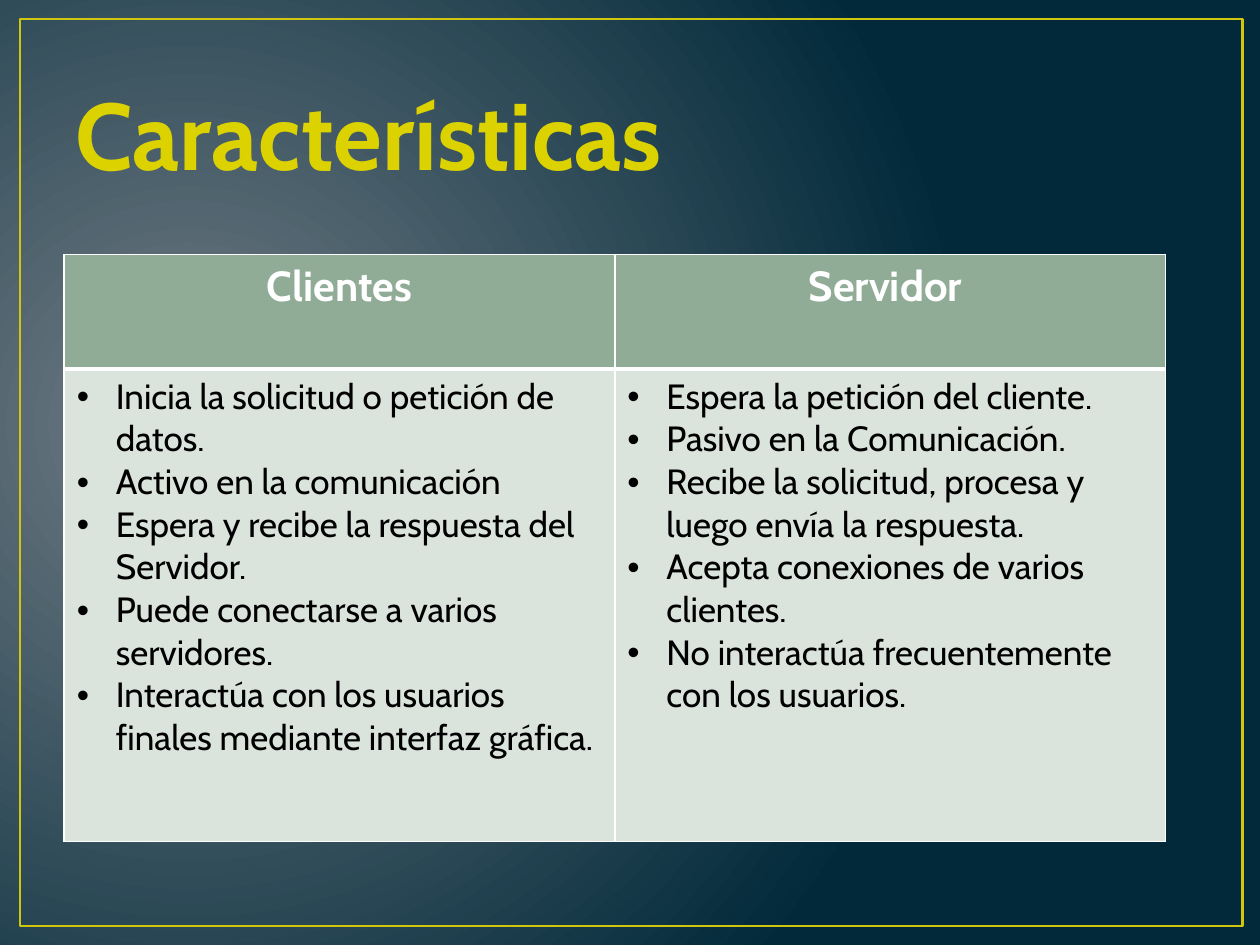
import pptx
import pptx.util
import pptx.dml.color
import pptx.enum.shapes
import pptx.enum.text
import pptx.oxml
import pptx.oxml.ns
from dataclasses import dataclass

TITLE = "Características"
COLUMNS = {
    "Clientes": [
        "Inicia la solicitud o petición de datos.",
        "Activo en la comunicación",
        "Espera y recibe la respuesta del Servidor.",
        "Puede conectarse a varios servidores.",
        "Interactúa con los usuarios finales mediante interfaz gráfica.",
    ],
    "Servidor ": [
        "Espera la petición del cliente.",
        "Pasivo en la Comunicación.",
        "Recibe la solicitud, procesa y luego envía la respuesta.",
        "Acepta conexiones de varios clientes.",
        "No interactúa frecuentemente con los usuarios.",
    ],
}


@dataclass
class Theme:
    font: str = "Cabin"
    glow: str = "717C84"
    night: str = "01293A"
    frame: str = "CFC60D"
    title: str = "DCD200"
    head: str = "90AC97"
    body: str = "DBE3DD"
    white: str = "FFFFFF"
    black: str = "000000"
    title_size: int = 54
    head_size: int = 24
    body_size: int = 20


T = Theme()
W, H = 10, 7.5
ROWS = [0.91, 3.75]
TABLE = (0.51, 2.02, 8.74, sum(ROWS))
INDENT = 0.31
ALIGN = pptx.enum.text.PP_ALIGN
Inches = pptx.util.Inches
NS = pptx.oxml.ns.nsdecls("a")


def rgb(value):
    return pptx.dml.color.RGBColor.from_string(value)


def box(at):
    return [Inches(v) for v in at]


def write(tf, lines, size, color, bold=False, align=ALIGN.LEFT, bullet=False):
    tf.word_wrap = True
    for i, text in enumerate(lines):
        p = tf.add_paragraph() if i else tf.paragraphs[0]
        p.alignment = align
        r = p.add_run()
        r.text = text
        r.font.name = T.font
        r.font.size = pptx.util.Pt(size)
        r.font.bold = bold
        r.font.color.rgb = rgb(color)
        if bullet:
            pr = p._p.get_or_add_pPr()
            pr.set("marL", str(Inches(INDENT)))
            pr.set("indent", str(-Inches(INDENT)))
            pr.append(pptx.oxml.parse_xml(f'<a:buFont {NS} typeface="Arial"/>'))
            pr.append(pptx.oxml.parse_xml(f'<a:buChar {NS} char="•"/>'))


def paint_background(s):
    s.background.fill.gradient()
    grad = next(s.element.iter(pptx.oxml.ns.qn("a:gradFill")))
    stops = "".join(
        f'<a:gs pos="{pos}"><a:srgbClr val="{color}"/></a:gs>'
        for pos, color in ((0, T.glow), (100000, T.night))
    )
    grad.getparent().replace(grad, pptx.oxml.parse_xml(
        f'<a:gradFill {NS} rotWithShape="1"><a:gsLst>{stops}</a:gsLst>'
        '<a:path path="circle"><a:fillToRect l="15000" t="50000" r="85000" b="60000"/>'
        '</a:path></a:gradFill>'))


def style_cell(cell, fill, **widths):
    cell.fill.solid()
    cell.fill.fore_color.rgb = rgb(fill)
    pr = cell._tc.get_or_add_tcPr()
    for i, side in enumerate("LRTB"):
        width = pptx.util.Pt(widths.get(side, 1))
        pr.insert(i, pptx.oxml.parse_xml(
            f'<a:ln{side} {NS} w="{width}"><a:solidFill>'
            f'<a:srgbClr val="{T.white}"/></a:solidFill></a:ln{side}>'))


def main():
    prs = pptx.Presentation()
    prs.slide_width, prs.slide_height = Inches(W), Inches(H)
    s = prs.slides.add_slide(prs.slide_layouts[6])
    paint_background(s)

    frame = s.shapes.add_shape(
        pptx.enum.shapes.MSO_SHAPE.RECTANGLE, *box((0.16, 0.15, 9.7, 7.2)))
    frame.shadow.inherit = False
    frame.fill.background()
    frame.line.color.rgb = rgb(T.frame)
    frame.line.width = pptx.util.Pt(1.5)

    title = s.shapes.add_textbox(*box((0.5, 0.3, 9, 1.25)))
    title.text_frame.vertical_anchor = pptx.enum.text.MSO_ANCHOR.BOTTOM
    write(title.text_frame, [TITLE], T.title_size, T.title, bold=True)

    table = s.shapes.add_table(len(ROWS), len(COLUMNS), *box(TABLE)).table
    for row, height in zip(table.rows, ROWS):
        row.height = Inches(height)
    for c, (name, items) in enumerate(COLUMNS.items()):
        head, body = table.cell(0, c), table.cell(1, c)
        style_cell(head, T.head, B=3)
        style_cell(body, T.body, T=3)
        write(head.text_frame, [name], T.head_size, T.white, bold=True, align=ALIGN.CENTER)
        write(body.text_frame, items, T.body_size, T.black, bullet=True)

    prs.save("out.pptx")


if __name__ == "__main__":
    main()
